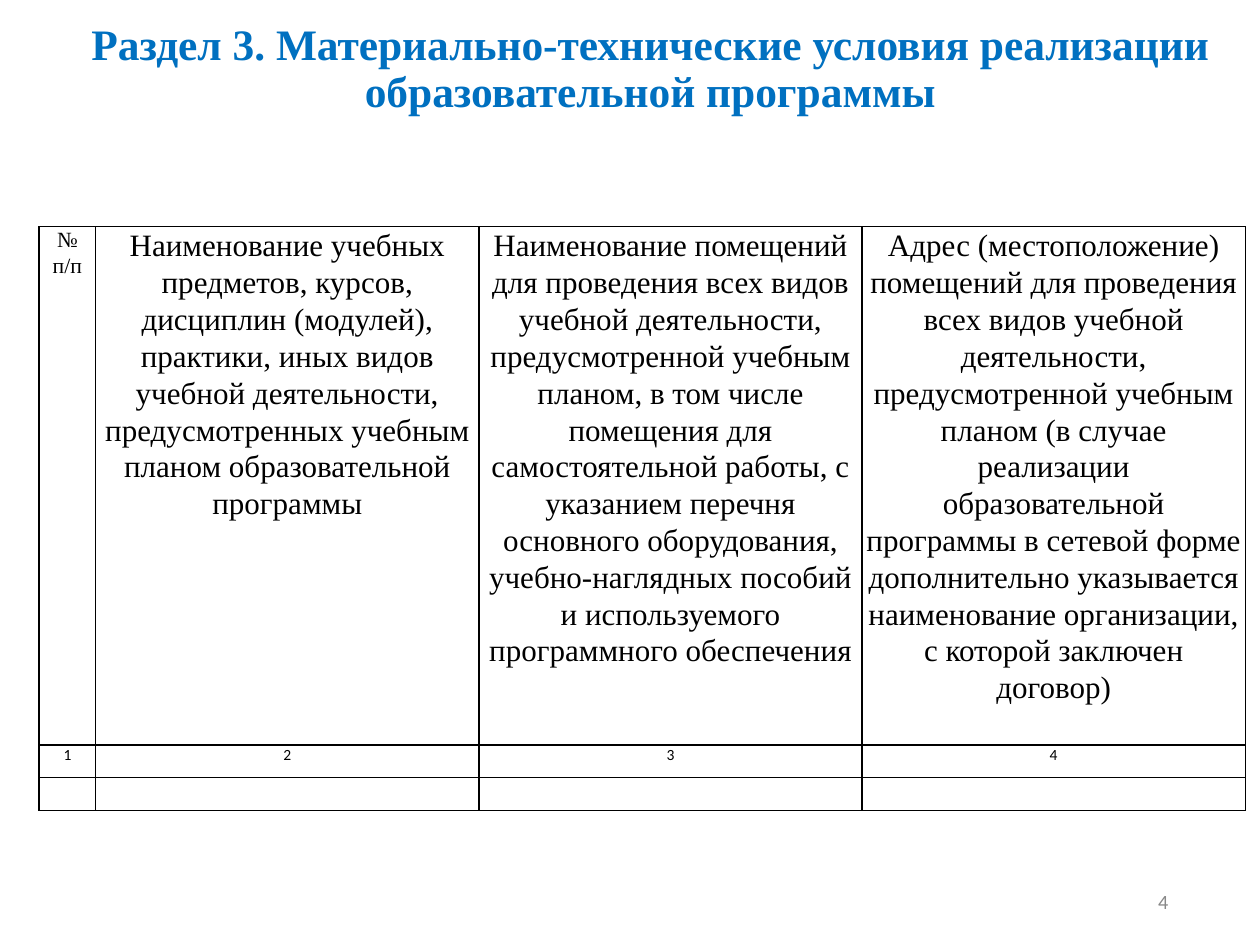
from dataclasses import dataclass

from lxml.etree import SubElement
from pptx import Presentation
from pptx.dml.color import RGBColor
from pptx.enum.text import MSO_ANCHOR as Anchor, PP_ALIGN as Align
from pptx.oxml.ns import qn
from pptx.slide import Slide
from pptx.table import _Cell as Cell
from pptx.text.text import TextFrame
from pptx.util import Pt

COLORS = {"title": "0070C0", "ink": "000000", "page": "888888"}
SERIF, SANS = "Times New Roman", "Calibri"
TABLE_LEFT, TABLE_TOP = 25.2, 146.2
COLUMN_WIDTHS = [36.5, 247, 247, 247]
ROW_HEIGHTS = [308, 20.9, 20.9]
BORDER_WIDTH = 1


@dataclass(frozen=True)
class Caption:
    text: str
    left: float
    top: float
    width: float
    height: float
    size: float
    font: str
    color: str
    align: Align
    bold: bool = False
    spacing: float = 1.0


@dataclass(frozen=True)
class Heading:
    text: str
    size: float = 20


CAPTIONS = [
    Caption("Раздел 3. Материально-технические условия реализации образовательной программы",
            51.84, 14.4, 734.4, 61.2, 28, SERIF, "title", Align.CENTER, bold=True, spacing=0.9),
    Caption("4", 573.8, 570.2, 182.9, 22.3, 13, SANS, "page", Align.RIGHT),
]

HEADINGS = [
    Heading("№ п/п", size=14),
    Heading("Наименование учебных предметов, курсов, дисциплин (модулей), практики, "
            "иных видов учебной деятельности, предусмотренных учебным планом "
            "образовательной программы"),
    Heading("Наименование помещений для проведения всех видов учебной деятельности, "
            "предусмотренной учебным планом, в том числе помещения для самостоятельной "
            "работы, с указанием перечня основного оборудования, учебно-наглядных "
            "пособий и используемого программного обеспечения"),
    Heading("Адрес (местоположение) помещений для проведения всех видов учебной "
            "деятельности, предусмотренной учебным планом (в случае реализации "
            "образовательной программы в сетевой форме дополнительно указывается "
            "наименование организации, с которой заключен договор)"),
]


def write_text(frame: TextFrame, text: str, *, size: float, font: str, color: str = "ink",
               align: Align = Align.CENTER, bold: bool = False, spacing: float = 1.07) -> None:
    frame.word_wrap = True
    paragraph = frame.paragraphs[0]
    paragraph.alignment = align
    paragraph.line_spacing = spacing
    run = paragraph.add_run()
    run.text = text
    run.font.size = Pt(size)
    run.font.name = font
    run.font.bold = bold
    run.font.color.rgb = RGBColor.from_string(COLORS[color])


def add_caption(slide: Slide, caption: Caption) -> None:
    box = slide.shapes.add_textbox(Pt(caption.left), Pt(caption.top),
                                   Pt(caption.width), Pt(caption.height))
    frame = box.text_frame
    frame.vertical_anchor = Anchor.MIDDLE
    frame.margin_left = frame.margin_right = Pt(3.6)
    frame.margin_top = frame.margin_bottom = Pt(3.6)
    write_text(frame, caption.text, size=caption.size, font=caption.font, color=caption.color,
               align=caption.align, bold=caption.bold, spacing=caption.spacing)


def style_cell(cell: Cell) -> None:
    """Clear the fill, narrow the margins and rule all four sides."""
    cell.margin_left = cell.margin_right = Pt(1.5)
    cell.margin_top = cell.margin_bottom = 0
    properties = cell._tc.get_or_add_tcPr()
    for side in ("a:lnL", "a:lnR", "a:lnT", "a:lnB"):
        border = SubElement(properties, qn(side), w=str(Pt(BORDER_WIDTH)))
        SubElement(SubElement(border, qn("a:solidFill")), qn("a:srgbClr"), val=COLORS["ink"])
    cell.fill.background()


def add_rooms_table(slide: Slide) -> None:
    rooms = slide.shapes.add_table(
        len(ROW_HEIGHTS), len(COLUMN_WIDTHS), Pt(TABLE_LEFT), Pt(TABLE_TOP),
        Pt(sum(COLUMN_WIDTHS)), Pt(sum(ROW_HEIGHTS))).table
    rooms.first_row = rooms.horz_banding = False
    for row, height in zip(rooms.rows, ROW_HEIGHTS):
        row.height = Pt(height)
    for index, (heading, width) in enumerate(zip(HEADINGS, COLUMN_WIDTHS)):
        rooms.columns[index].width = Pt(width)
        header, number, entry = (rooms.cell(row, index) for row in range(len(ROW_HEIGHTS)))
        for cell in (header, number, entry):
            style_cell(cell)
        write_text(header.text_frame, heading.text, size=heading.size, font=SERIF)
        write_text(number.text_frame, str(index + 1), size=10, font=SANS)
        write_text(entry.text_frame, "", size=10, font=SANS)


def main() -> None:
    presentation = Presentation()
    presentation.slide_width = Pt(812.16)
    presentation.slide_height = Pt(609.12)
    slide = presentation.slides.add_slide(presentation.slide_layouts[6])
    for caption in CAPTIONS:
        add_caption(slide, caption)
    add_rooms_table(slide)
    presentation.save("out.pptx")


if __name__ == "__main__":
    main()
